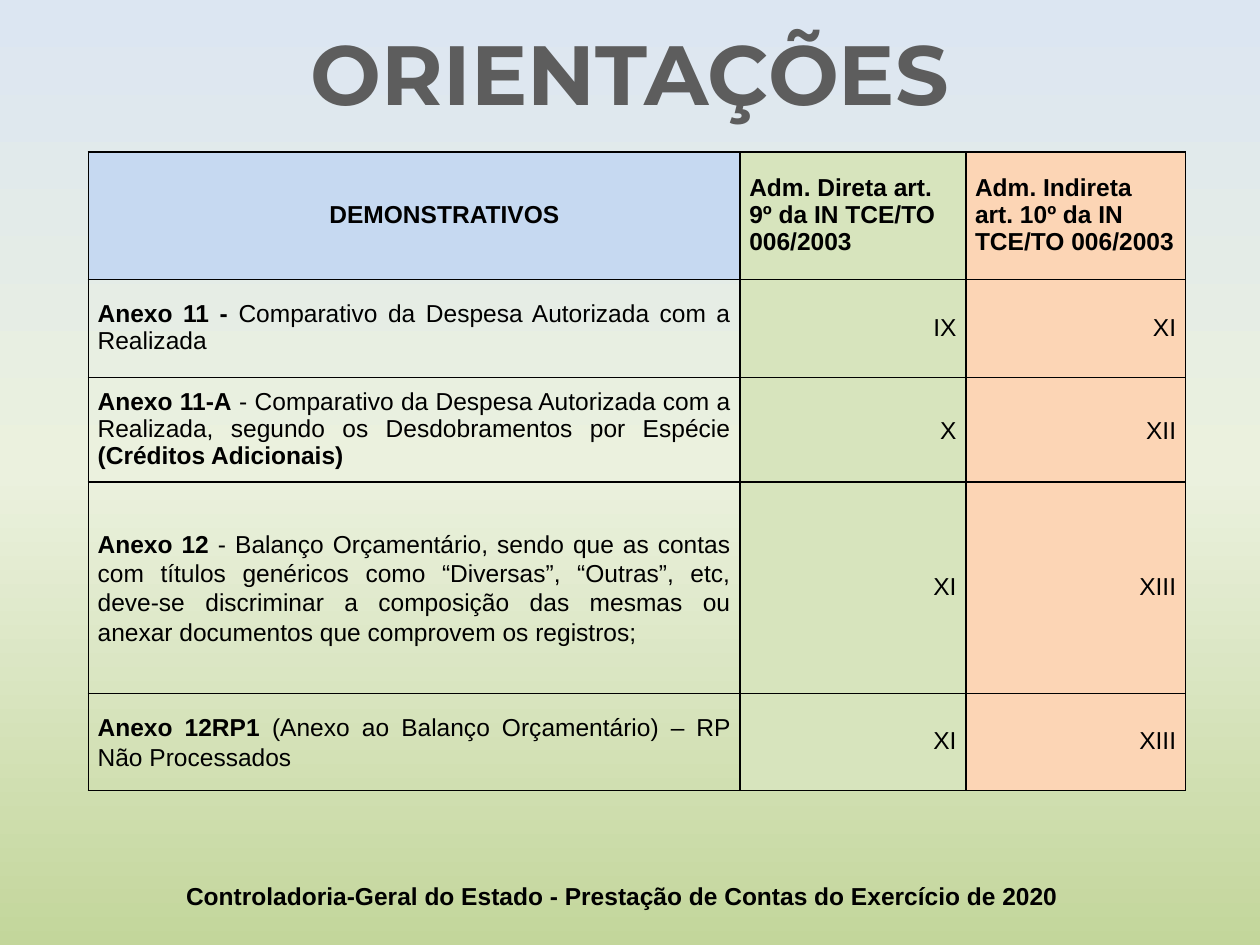
from copy import deepcopy

from lxml.etree import SubElement
from pptx import Presentation
from pptx.dml.color import RGBColor
from pptx.enum.text import MSO_ANCHOR, MSO_AUTO_SIZE, PP_ALIGN
from pptx.oxml import parse_xml
from pptx.oxml.ns import nsdecls, qn
from pptx.util import Pt

TITLE = "ORIENTAÇÕES"
FOOTER = "Controladoria-Geral do Estado - Prestação de Contas do Exercício de 2020"
BACKGROUND = [(0, "DCE6F2"), (0.5, "EBF1DE"), (1, "C3D69B")]
BLUE, GREEN, ORANGE = "C6D9F1", "D7E4BD", "FCD5B5"

COLUMN_WIDTHS = [372.4, 129, 125.5]
ROW_HEIGHTS = [72.6, 56, 59.8, 120.9, 55.4]
TABLE_LEFT, TABLE_TOP = 50.5, 87

# A cell is a list of paragraphs; a paragraph is a list of (text, bold) runs.
HEADERS = [
    [[("DEMONSTRATIVOS", True)]],
    [[("Adm. Direta art. 9º da IN TCE/TO 006/2003", True)]],
    [[("Adm. Indireta art. 10º da IN", True)], [("TCE/TO 006/2003", True)]],
]
# Description runs, direct item, indirect item, description spacing, item spacing, item indent
ANNEXES = [
    ([("Anexo 11 - ", True),
      ("Comparativo da Despesa Autorizada com a Realizada", False)],
     "IX", "XI", 0.98, 0.98, 34.5),
    ([("Anexo 11-A", True),
      (" - Comparativo da Despesa Autorizada com a Realizada, segundo os "
       "Desdobramentos por Espécie ", False),
      ("(Créditos Adicionais)", True)],
     "X", "XII", 0.98, 1.07, 11),
    ([("Anexo 12", True),
      (" - Balanço Orçamentário, sendo que as contas com títulos genéricos como "
       "“Diversas”, “Outras”, etc, deve-se discriminar a composição das mesmas ou "
       "anexar documentos que comprovem os registros;", False)],
     "XI", "XIII", 1.07, 0.98, 34.5),
    ([("Anexo 12RP1", True),
      (" (Anexo ao Balanço Orçamentário) – RP Não Processados", False)],
     "XI", "XIII", 1.07, 0.98, 34.5),
]


def rgb(hex_color):
    return RGBColor.from_string(hex_color)


def write(frame, paragraphs, font="Arial", size=14, color="000000",
          align=PP_ALIGN.LEFT, spacing=None, indent=0):
    """Fill a text frame with paragraphs of (text, bold) runs."""
    frame.word_wrap = True
    for number, runs in enumerate(paragraphs):
        paragraph = frame.paragraphs[0] if number == 0 else frame.add_paragraph()
        paragraph.alignment = align
        if spacing:
            paragraph.line_spacing = spacing
        if indent:
            properties = paragraph._p.get_or_add_pPr()
            properties.set("marL", "0")
            properties.set("indent", str(Pt(indent)))
        for text, bold in runs:
            run = paragraph.add_run()
            run.text = text
            run.font.name, run.font.size, run.font.bold = font, Pt(size), bold
            run.font.color.rgb = rgb(color)


def place(shape, left, top, width, height):
    shape.left, shape.top, shape.width, shape.height = map(Pt, (left, top, width, height))


def paint_background(slide):
    fill = slide.background.fill
    fill.gradient()
    fill.gradient_angle = 270
    stop_list = slide.element.xpath(".//a:gsLst")[0]
    stop_list.insert(1, deepcopy(stop_list[0]))
    for stop, (position, color) in zip(fill.gradient_stops, BACKGROUND):
        stop.position = position
        stop.color.rgb = rgb(color)


def add_borders(cell):
    properties = cell._tc.get_or_add_tcPr()
    for index, side in enumerate(("lnL", "lnR", "lnT", "lnB")):
        line = parse_xml(f'<a:{side} {nsdecls("a")} w="{Pt(1)}"/>')
        solid = SubElement(line, qn("a:solidFill"))
        SubElement(solid, qn("a:srgbClr"), val="000000")
        properties.insert(index, line)


def fill_cell(cell, paragraphs, fill=None, **text_format):
    cell.vertical_anchor = MSO_ANCHOR.MIDDLE
    cell.margin_left = cell.margin_right = Pt(5.3)
    cell.margin_top = cell.margin_bottom = 0
    if fill:
        cell.fill.solid()
        cell.fill.fore_color.rgb = rgb(fill)
    else:
        cell.fill.background()
    add_borders(cell)
    write(cell.text_frame, paragraphs, **text_format)


def add_annex_table(slide):
    table = slide.shapes.add_table(
        len(ROW_HEIGHTS), len(COLUMN_WIDTHS), Pt(TABLE_LEFT), Pt(TABLE_TOP),
        Pt(sum(COLUMN_WIDTHS)), Pt(sum(ROW_HEIGHTS))).table
    table.first_row = table.horz_banding = False
    for column, width in zip(table.columns, COLUMN_WIDTHS):
        column.width = Pt(width)
    for row, height in zip(table.rows, ROW_HEIGHTS):
        row.height = Pt(height)

    header_formats = [{"align": PP_ALIGN.CENTER, "indent": 34.5}, {}, {}]
    for column, (header, fill) in enumerate(zip(HEADERS, (BLUE, GREEN, ORANGE))):
        fill_cell(table.cell(0, column), header, fill, spacing=0.98,
                  **header_formats[column])

    for row, annex in enumerate(ANNEXES, start=1):
        description, direct, indirect, spacing, item_spacing, indent = annex
        fill_cell(table.cell(row, 0), [description], align=PP_ALIGN.JUSTIFY, spacing=spacing)
        for column, (item, fill) in enumerate([(direct, GREEN), (indirect, ORANGE)], start=1):
            fill_cell(table.cell(row, column), [[(item, False)]], fill,
                      align=PP_ALIGN.RIGHT, spacing=item_spacing, indent=indent)


def main():
    presentation = Presentation()
    presentation.slide_width, presentation.slide_height = Pt(720), Pt(540)
    slide = presentation.slides.add_slide(presentation.slide_layouts[5])
    paint_background(slide)

    footer = slide.shapes.add_textbox(Pt(39.6), Pt(499.7), Pt(632), Pt(24.5))
    write(footer.text_frame, [[(FOOTER, True)]], align=PP_ALIGN.CENTER)

    add_annex_table(slide)

    title = slide.shapes.title
    place(title, 4.3, 8.6, 711.4, 65.5)
    title.text_frame.auto_size = MSO_AUTO_SIZE.NONE
    title.text_frame.vertical_anchor = MSO_ANCHOR.TOP
    write(title.text_frame, [[(TITLE, True)]], font="Montserrat", size=48,
          color="5D5D5D", align=PP_ALIGN.CENTER)

    presentation.save("out.pptx")


if __name__ == "__main__":
    main()
